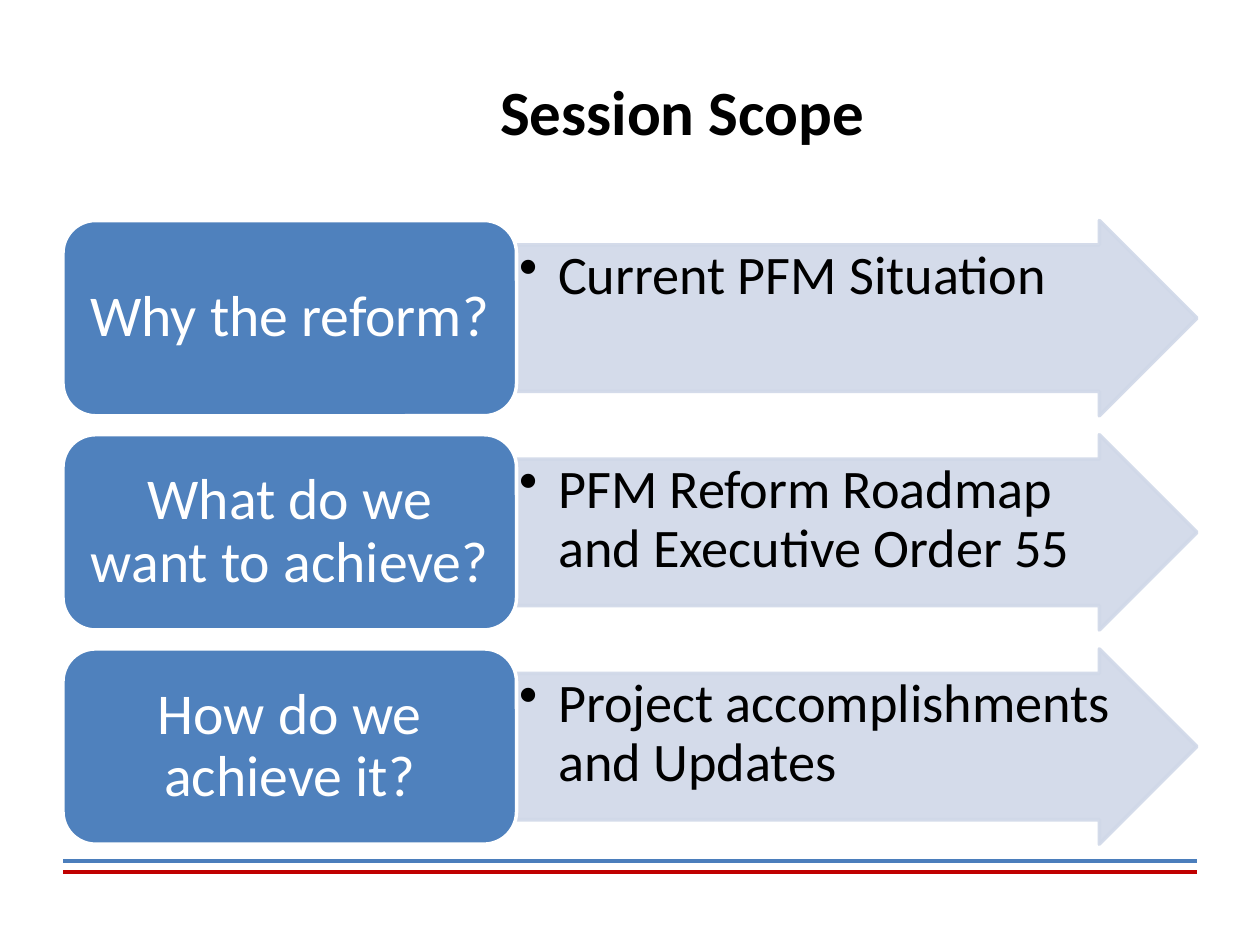
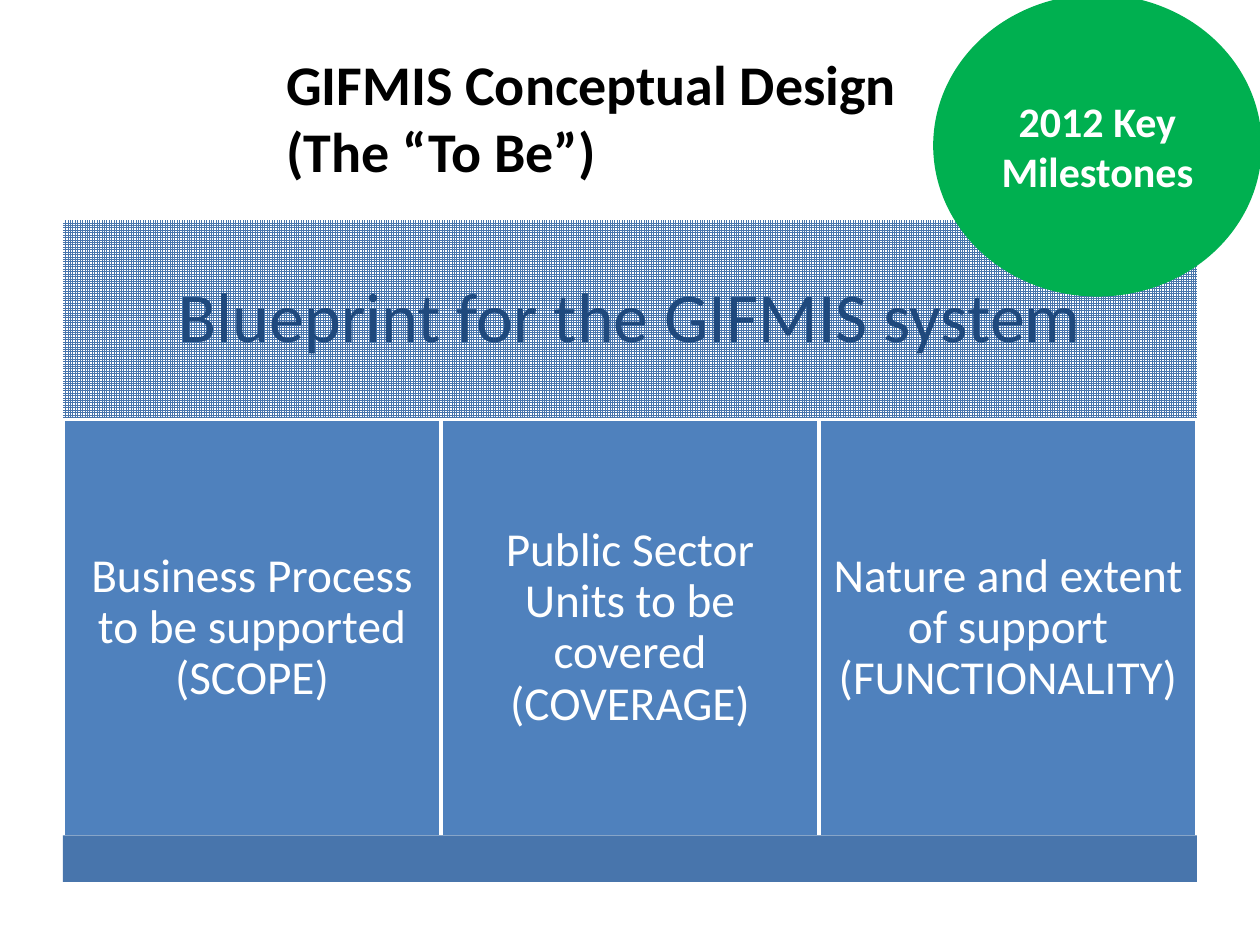
"""Build the session scope and conceptual design slides."""
import lxml.etree
import pptx
import pptx.dml.color
import pptx.enum.dml
import pptx.enum.shapes
import pptx.enum.text
import pptx.oxml.ns
import pptx.util

Inches = pptx.util.Inches
Shapes = pptx.enum.shapes.MSO_SHAPE
Align = pptx.enum.text.PP_ALIGN
Anchor = pptx.enum.text.MSO_ANCHOR

FONT = "Calibri"
WHITE, BLACK = "FFFFFF", "000000"
BLUE, DARK_BLUE, NAVY, PALE_BLUE = "4F81BD", "4875AC", "1F497D", "D0D8E8"
RULE_BLUE, RED, GREEN = "4B7EBC", "C00000", "00B050"
LEFT, TOP, WIDTH = 0.5, 1.75, 9


def color(hex_text):
    return pptx.dml.color.RGBColor.from_string(hex_text)


def add_element(parent, tag, **attributes):
    return lxml.etree.SubElement(parent, pptx.oxml.ns.qn(tag), **attributes)


def format_text(text_frame, size, text_color, bold=False, align=Align.CENTER, spacing=None):
    for paragraph in text_frame.paragraphs:
        paragraph.alignment = align
        paragraph.line_spacing = spacing
        for run in paragraph.runs:
            run.font.name = FONT
            run.font.size = pptx.util.Pt(size)
            run.font.bold = bold
            run.font.color.rgb = color(text_color)


def add_rule(slide, top, line_color):
    rule = slide.shapes.add_connector(
        pptx.enum.shapes.MSO_CONNECTOR.STRAIGHT,
        Inches(LEFT), Inches(top), Inches(LEFT + WIDTH), Inches(top))
    rule.line.color.rgb = color(line_color)
    rule.line.width = pptx.util.Pt(2.25)
    add_element(rule._element.spPr, "a:effectLst")


def add_titled_slide(presentation, title, box, size, align):
    slide = presentation.slides.add_slide(presentation.slide_layouts[5])
    add_rule(slide, 6.83, RULE_BLUE)
    add_rule(slide, 6.92, RED)
    shape = slide.shapes.title
    shape.left, shape.top, shape.width, shape.height = map(Inches, box)
    shape.text_frame.text = title
    shape.text_frame.vertical_anchor = Anchor.MIDDLE
    format_text(shape.text_frame, size, BLACK, True, align)
    return slide


def add_block(slide, kind, box, fill_color, line_color=None):
    shape = slide.shapes.add_shape(kind, *map(Inches, box))
    shape.shadow.inherit = False
    shape.fill.solid()
    shape.fill.fore_color.rgb = color(fill_color)
    if line_color:
        shape.line.color.rgb = color(line_color)
        shape.line.width = pptx.util.Pt(2)
    else:
        shape.line.fill.background()
    return shape


def set_label(shape, text, size, text_color, inset_x, inset_y, align=Align.CENTER):
    frame = shape.text_frame
    frame.word_wrap = True
    frame.margin_left = frame.margin_right = Inches(inset_x)
    frame.margin_top = frame.margin_bottom = Inches(inset_y)
    frame.vertical_anchor = Anchor.MIDDLE
    frame.text = text
    format_text(frame, size, text_color, align=align, spacing=0.9)


def add_answer_arrow(slide, box, text):
    arrow = add_block(slide, Shapes.RIGHT_ARROW, box, PALE_BLUE, PALE_BLUE)
    arrow.adjustments[0] = 0.75
    for fill_color in arrow._element.spPr.iter(pptx.oxml.ns.qn("a:srgbClr")):
        add_element(fill_color, "a:alpha", val="90000")
    set_label(arrow, text, 31, BLACK, 0.02, 0.02, Align.LEFT)
    arrow.text_frame.vertical_anchor = Anchor.TOP
    properties = arrow.text_frame.paragraphs[0]._p.get_or_add_pPr()
    properties.set("marL", str(Inches(0.31)))
    properties.set("indent", str(-Inches(0.31)))
    add_element(properties, "a:buChar", char="•")


def build_scope_slide(presentation):
    slide = add_titled_slide(
        presentation, "Session Scope", (1.75, 0.25, 7.33, 1.25), 36, Align.CENTER)
    topics = [
        ("Why the reform?", "Current PFM Situation"),
        ("What do we want to achieve?", "PFM Reform Roadmap and Executive Order 55"),
        ("How do we achieve it?", "Project accomplishments and Updates"),
    ]
    row_height, row_pitch, question_width = 1.55, 1.7, 3.6
    for row, (question, answer) in enumerate(topics):
        top = TOP + row * row_pitch
        add_answer_arrow(
            slide,
            (LEFT + question_width, top, WIDTH - question_width, row_height), answer)
        block = add_block(
            slide, Shapes.ROUNDED_RECTANGLE,
            (LEFT, top, question_width, row_height), BLUE, WHITE)
        set_label(block, question, 33, WHITE, 0.14, 0.07)


def build_design_slide(presentation):
    slide = add_titled_slide(
        presentation, "GIFMIS Conceptual Design\v(The “To Be”)",
        (2.17, 0.3, 5.25, 1.25), 32, Align.LEFT)
    blueprint = add_block(slide, Shapes.RECTANGLE, (LEFT, TOP, WIDTH, 1.57), WHITE)
    blueprint.fill.patterned()
    blueprint.fill.pattern = pptx.enum.dml.MSO_PATTERN.SMALL_GRID
    blueprint.fill.fore_color.rgb = color(DARK_BLUE)
    blueprint.fill.back_color.rgb = color(WHITE)
    set_label(blueprint, "Blueprint for the GIFMIS system", 40, NAVY, 0.17, 0.17)

    pillars = [
        "Business Process to be supported (SCOPE)",
        "Public Sector Units to be covered (COVERAGE)",
        "Nature and extent of support (FUNCTIONALITY)",
    ]
    pillar_width = WIDTH / len(pillars)
    for column, text in enumerate(pillars):
        pillar = add_block(
            slide, Shapes.RECTANGLE,
            (LEFT + column * pillar_width, 3.33, pillar_width, 3.31), BLUE, WHITE)
        set_label(pillar, text, 27, WHITE, 0.11, 0.11)
    add_block(slide, Shapes.RECTANGLE, (LEFT, 6.63, WIDTH, 0.37), DARK_BLUE)

    badge = add_block(
        slide, Shapes.FLOWCHART_CONNECTOR, (7.42, -0.03, 2.58, 2.37), GREEN, GREEN)
    badge.text_frame.word_wrap = True
    badge.text_frame.text = "2012 Key Milestones"
    format_text(badge.text_frame, 24, WHITE, True)


def main():
    presentation = pptx.Presentation()
    presentation.slide_width = Inches(10)
    presentation.slide_height = Inches(7.5)
    build_scope_slide(presentation)
    build_design_slide(presentation)
    presentation.save("out.pptx")


if __name__ == "__main__":
    main()
